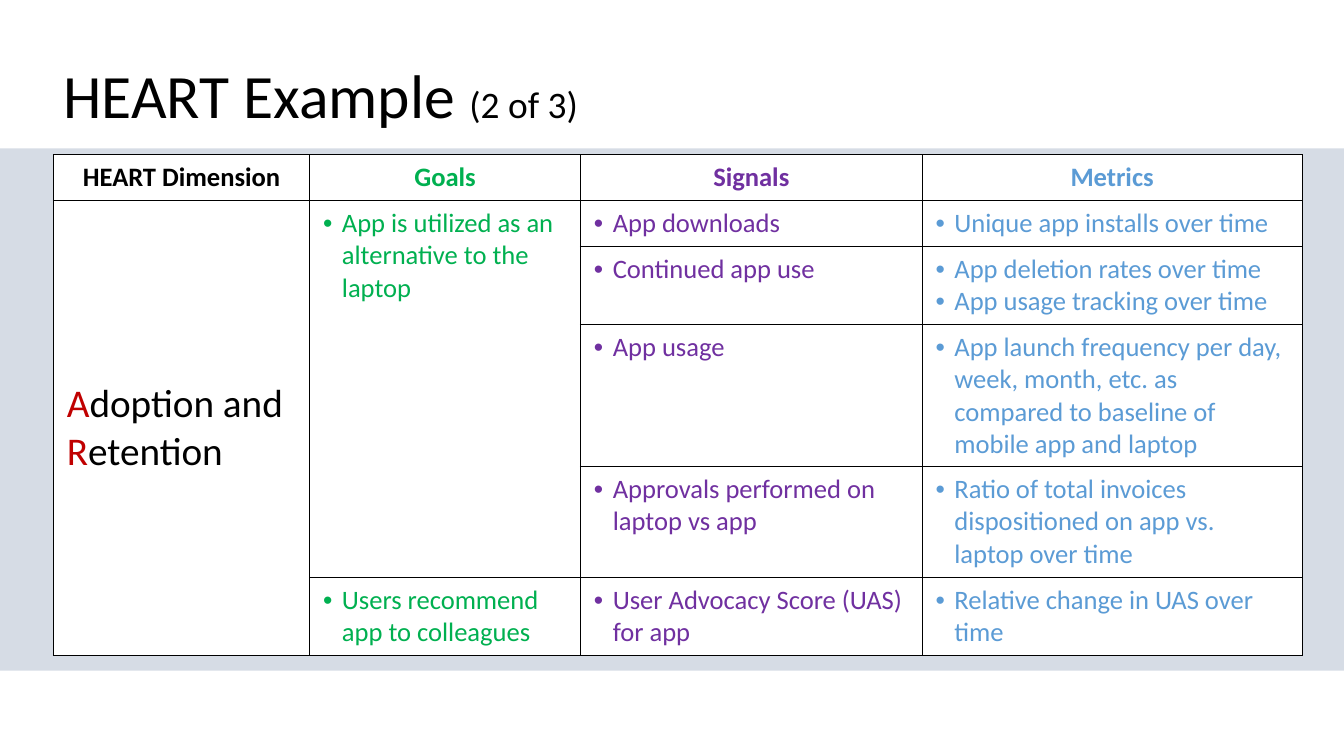
from lxml.etree import SubElement
from pptx import Presentation
from pptx.dml.color import RGBColor
from pptx.enum.shapes import MSO_SHAPE
from pptx.enum.text import MSO_ANCHOR, PP_ALIGN
from pptx.oxml.ns import qn
from pptx.util import Pt

BLACK, RED, GREEN, PURPLE, BLUE = "000000", "C00000", "00B050", "7030A0", "5B9BD5"
COLUMNS = [
    ("HEART Dimension", BLACK, 183),
    ("Goals", GREEN, 193.5),
    ("Signals", PURPLE, 244),
    ("Metrics", BLUE, 271.5),
]
ROW_HEIGHTS = [32.9, 32.9, 55.7, 101.4, 79.3, 55.7]
BULLETS = {
    (1, 1): ["App is utilized as an alternative to the laptop"],
    (5, 1): ["Users recommend app to colleagues"],
    (1, 2): ["App downloads"],
    (2, 2): ["Continued app use"],
    (3, 2): ["App usage"],
    (4, 2): ["Approvals performed on laptop vs app"],
    (5, 2): ["User Advocacy Score (UAS) for app"],
    (1, 3): ["Unique app installs over time"],
    (2, 3): ["App deletion rates over time", "App usage tracking over time"],
    (3, 3): ["App launch frequency per day, week, month, etc. as compared to baseline of mobile app and laptop"],
    (4, 3): ["Ratio of total invoices dispositioned on app vs. laptop over time"],
    (5, 3): ["Relative change in UAS over time"],
}


def rgb(color):
    return RGBColor.from_string(color)


def add_run(p, text, size, color, bold=False):
    r = p.add_run()
    r.text = text
    r.font.name = "Calibri"
    r.font.size = Pt(size)
    r.font.bold = bold
    r.font.color.rgb = rgb(color)


prs = Presentation()
prs.slide_width, prs.slide_height = Pt(960), Pt(540)
s = prs.slides.add_slide(prs.slide_layouts[6])

band = s.shapes.add_shape(MSO_SHAPE.RECTANGLE, 0, Pt(106), Pt(960), Pt(373))
band.shadow.inherit = False
band.fill.solid()
band.fill.fore_color.rgb = rgb("D6DCE5")
band.line.fill.background()

title = s.shapes.add_textbox(Pt(38.2), Pt(42.5), Pt(883.4), Pt(55.4))
tf = title.text_frame
tf.word_wrap = True
tf.vertical_anchor = MSO_ANCHOR.BOTTOM
p = tf.paragraphs[0]
p.line_spacing = 0.9
add_run(p, "HEART Example ", 44, BLACK)
add_run(p, "(2 of 3)", 26.7, BLACK)

frame = s.shapes.add_table(len(ROW_HEIGHTS), len(COLUMNS), Pt(38.2), Pt(110.5),
                           Pt(sum(c[2] for c in COLUMNS)), Pt(sum(ROW_HEIGHTS)))
table = frame.table
table.first_row = False
table.horz_banding = False
for row, height in zip(table.rows, ROW_HEIGHTS):
    row.height = Pt(height)

for cell in table.iter_cells():
    cell.margin_left = cell.margin_right = Pt(9.6)
    cell.margin_top = cell.margin_bottom = Pt(4.8)
    tcPr = cell._tc.get_or_add_tcPr()
    for side in ("a:lnL", "a:lnR", "a:lnT", "a:lnB"):
        ln = SubElement(tcPr, qn(side), w=str(Pt(1)))
        SubElement(SubElement(ln, qn("a:solidFill")), qn("a:srgbClr"), val=BLACK)
    cell.fill.solid()
    cell.fill.fore_color.rgb = rgb("FFFFFF")

for i, (heading, color, width) in enumerate(COLUMNS):
    table.columns[i].width = Pt(width)
    cell = table.cell(0, i)
    cell.vertical_anchor = MSO_ANCHOR.MIDDLE
    p = cell.text_frame.paragraphs[0]
    p.alignment = PP_ALIGN.CENTER
    add_run(p, heading, 19, color, True)

dimension = table.cell(1, 0)
dimension.merge(table.cell(5, 0))
dimension.vertical_anchor = MSO_ANCHOR.MIDDLE
p = dimension.text_frame.paragraphs[0]
for text, color in [("A", RED), ("doption and ", BLACK), ("R", RED), ("etention", BLACK)]:
    add_run(p, text, 28, color)

table.cell(1, 1).merge(table.cell(4, 1))
for (row, col), items in BULLETS.items():
    tf = table.cell(row, col).text_frame
    for i, item in enumerate(items):
        p = tf.add_paragraph() if i else tf.paragraphs[0]
        pPr = p._p.get_or_add_pPr()
        pPr.set("marL", str(Pt(13.5)))
        pPr.set("indent", str(-Pt(13.5)))
        SubElement(pPr, qn("a:buFont"), typeface="Arial")
        SubElement(pPr, qn("a:buChar"), char="•")
        add_run(p, item, 19, COLUMNS[col][1])

prs.save("out.pptx")
